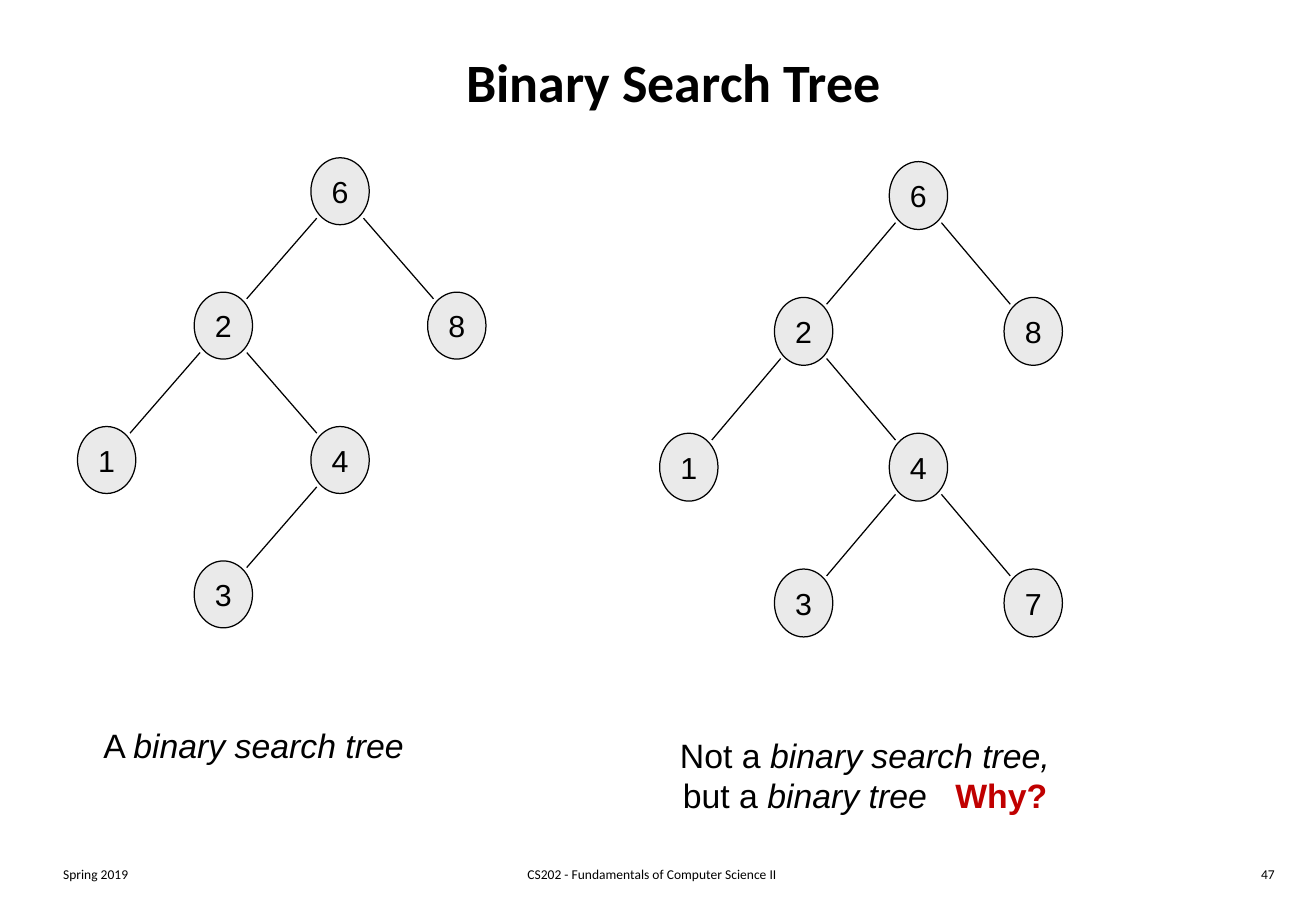
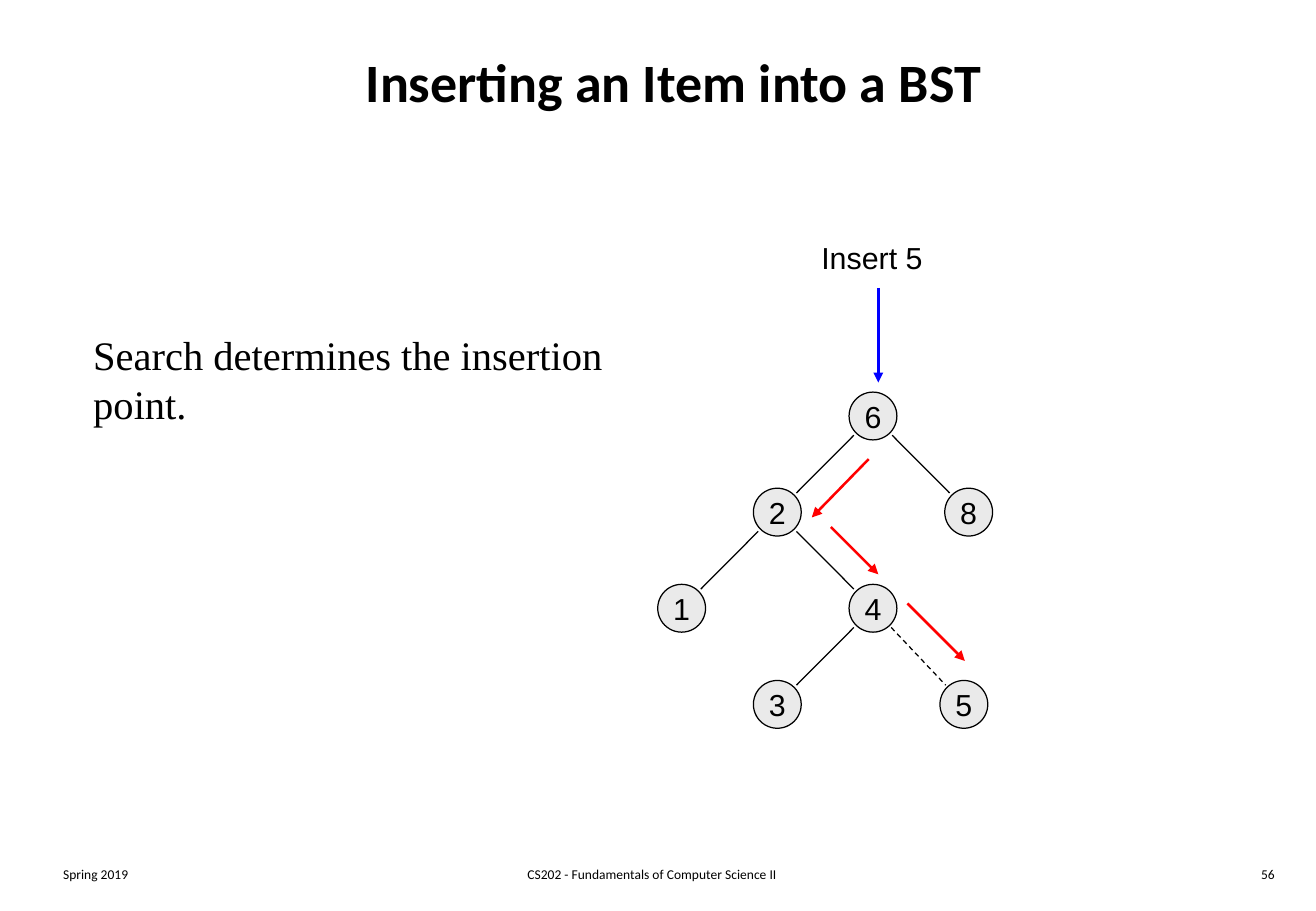
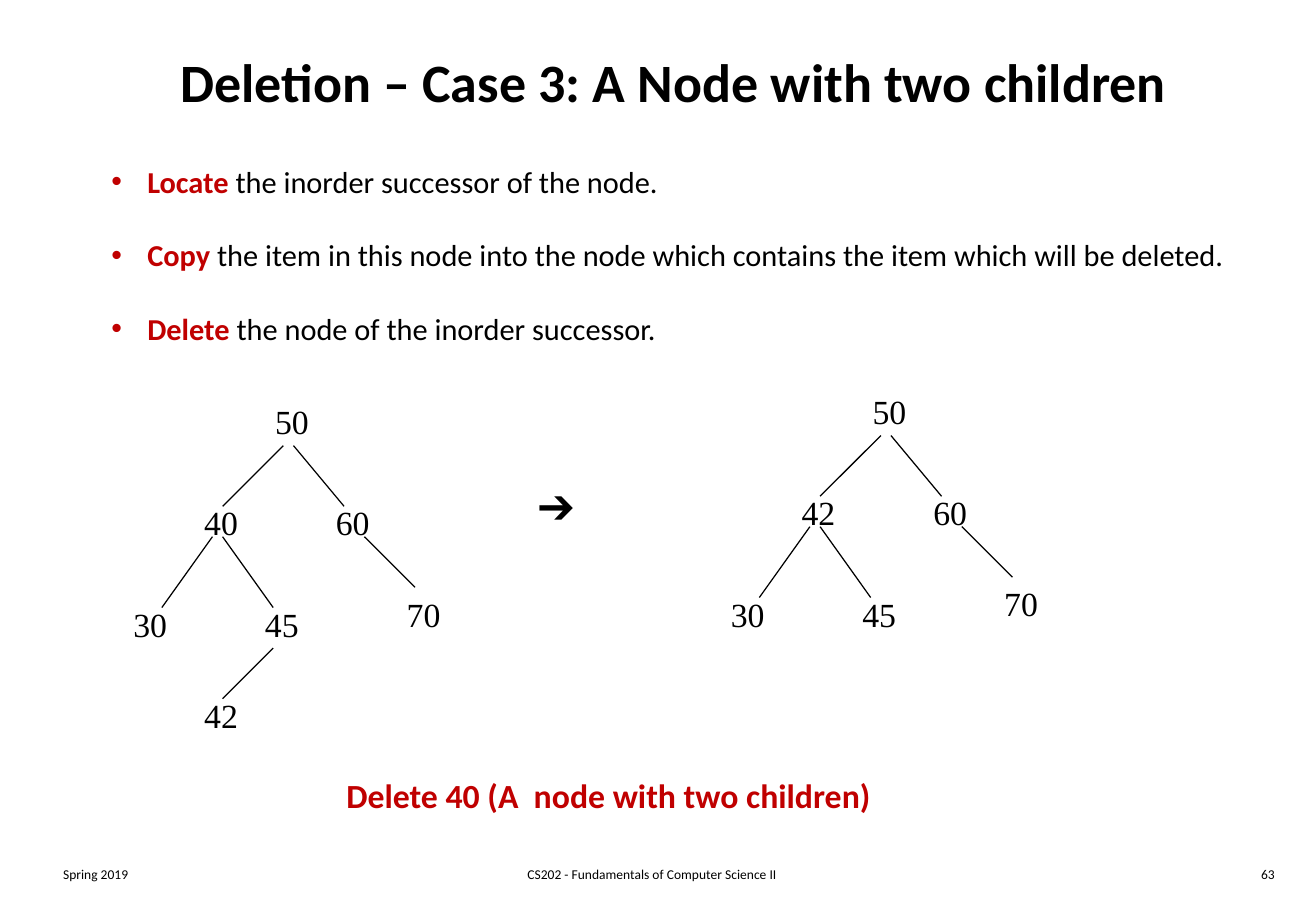
from lxml import etree
from pptx import Presentation
from pptx.dml.color import RGBColor
from pptx.enum import dml, shapes, text
from pptx.oxml import ns
from pptx.util import Cm, Pt

COLORS = {"ink": "000000", "node": "EAEAEA", "key": "C00000",
          "insert": "0000FF", "path": "FF0000"}
SANS, BODY, SERIF = "Arial", "Calibri", "Times New Roman"
LEFT, CENTER, RIGHT = text.PP_ALIGN.LEFT, text.PP_ALIGN.CENTER, text.PP_ALIGN.RIGHT

# Shared frame: all lengths are in centimetres
SLIDE_SIZE = (27.51, 19.05)
TITLE_BOX = (1.07, 0.43, 26.03, 2.54)
TERM, COURSE = "Spring 2019", "CS202 - Fundamentals of Computer Science II"
FOOTER_BOXES = [(1.07, 5.74, LEFT), (8.48, 10.31, CENTER), (21.16, 5.74, RIGHT)]
FOOTER_TOP, FOOTER_HEIGHT = 17.98, 0.64

# Circle trees: key -> (column, row) counted from the root
SEARCH_TREE = {"6": (0, 0), "2": (-1, 1), "8": (1, 1), "1": (-2, 2), "4": (0, 2), "3": (-1, 3)}
SEARCH_EDGES = ["62", "68", "21", "24", "43"]
EDGE_INSET = 0.2  # share of an edge left free at each end

# Label trees: places counted in twelfths of an inch from the root label
UNIT = 2.54 / 12
LABELS = [(0, 0), (-7, 10), (6, 10), (-14, 20), (-1, 20), (13, 19), (-7, 29)]
LABEL_EDGES = [((2, 5), (-4, 11)), ((3, 5), (8, 11)), ((-5, 14), (-10, 21)),
               ((-4, 14), (1, 21)), ((10, 14), (15, 19)), ((1, 25), (-4, 30))]
LABEL_TREES = [((5.5, 8.26), ["50", "40", "60", "30", "45", "70", "42"]),
               ((17.99, 8.05), ["50", "42", "60", "30", "45", "70"])]

INSERT_ARROWS = [((18.36, 6.02), (18.36, 8), "insert"),
                 ((18.16, 9.6), (16.97, 10.82), "path"),
                 ((17.37, 11.02), (18.36, 12.01), "path"),
                 ((18.97, 12.62), (20.17, 13.82), "path")]

IT = {"italic": True}
KEY = {"bold": True, "color": "key"}
VALID_CAPTION = [[("A ", {}), ("binary search tree", IT)]]
INVALID_CAPTION = [[("Not a ", {}), ("binary search tree,", IT)],
                   [("but a ", {}), ("binary tree   ", IT), ("Why?", KEY)]]
DELETION_STEPS = [
    [("Locate", KEY), (" the inorder successor of the node.", {})],
    [("Copy", KEY), (" the item in this node into the node which contains "
                     "the item which will be deleted.", {})],
    [("Delete", KEY), (" the node of the inorder successor.", {})],
]


def rgb(name):
    return RGBColor.from_string(COLORS[name])


def write(frame, paragraphs, size, font, align=LEFT, **style):
    """Fill a frame with paragraphs, each a string or a list of (text, style)."""
    for index, spans in enumerate(paragraphs):
        para = frame.paragraphs[0] if index == 0 else frame.add_paragraph()
        para.alignment = align
        for words, extra in [(spans, {})] if isinstance(spans, str) else spans:
            look = {**style, **extra}
            span = para.add_run()
            span.text = words
            span.font.name, span.font.size = font, Pt(size)
            span.font.bold = look.get("bold", False)
            span.font.italic = look.get("italic", False)
            span.font.color.rgb = rgb(look.get("color", "ink"))


def add_text(slide, box, paragraphs, size, font, align=LEFT, **style):
    frame = slide.shapes.add_textbox(*map(Cm, box)).text_frame
    frame.word_wrap = True
    write(frame, paragraphs, size, font, align, **style)
    return frame


def add_line(slide, start, end, color="ink", width=0.75, dashed=False, arrow=False):
    line = slide.shapes.add_connector(shapes.MSO_CONNECTOR.STRAIGHT, *map(Cm, (*start, *end)))
    line.line.color.rgb = rgb(color)
    line.line.width = Pt(width)
    if dashed:
        line.line.dash_style = dml.MSO_LINE.DASH
    if arrow:
        etree.SubElement(line.line._get_or_add_ln(), ns.qn("a:tailEnd"), type="triangle")
    etree.SubElement(line._element.spPr, ns.qn("a:effectLst"))


def add_circle_tree(slide, nodes, edges, root, step, size, dashed=()):
    centers = {key: tuple(root[axis] + place[axis] * step[axis] for axis in (0, 1))
               for key, place in nodes.items()}
    for edge in edges:
        parent, child = (centers[key] for key in edge)
        start, end = (tuple(a + share * (b - a) for a, b in zip(parent, child))
                      for share in (EDGE_INSET, 1 - EDGE_INSET))
        add_line(slide, start, end, dashed=edge in dashed)
    for key, (x, y) in centers.items():
        width, height = size
        node = slide.shapes.add_shape(
            shapes.MSO_SHAPE.OVAL, Cm(x - width / 2), Cm(y - height / 2), Cm(width), Cm(height))
        node.shadow.inherit = False
        node.fill.solid()
        node.fill.fore_color.rgb = rgb("node")
        node.line.color.rgb = rgb("ink")
        node.line.width = Pt(0.75)
        frame = node.text_frame
        frame.word_wrap = False
        frame.vertical_anchor = text.MSO_ANCHOR.MIDDLE
        frame.margin_left = frame.margin_right = frame.margin_top = frame.margin_bottom = 0
        write(frame, [key], 18, SANS, CENTER)


def add_label_tree(slide, root, keys):
    def place(point):
        return tuple(origin + UNIT * offset for origin, offset in zip(root, point))

    # Each label but the root has one edge leading to it
    for start, end in LABEL_EDGES[:len(keys) - 1]:
        add_line(slide, place(start), place(end))
    for key, point in zip(keys, LABELS):
        add_text(slide, (*place(point), 1.4, 1.09), [key], 20, SERIF)


def add_bullets(frame, indent, gap):
    for para in frame.paragraphs:
        para.space_after = Pt(gap)
        props = para._p.get_or_add_pPr()
        props.set("marL", str(Cm(indent)))
        props.set("indent", str(-Cm(indent)))
        etree.SubElement(props, ns.qn("a:buFont"), typeface=SANS)
        etree.SubElement(props, ns.qn("a:buChar"), char="•")


def new_slide(deck, title, number):
    slide = deck.slides.add_slide(deck.slide_layouts[6])
    frame = add_text(slide, TITLE_BOX, [title], 32, BODY, CENTER, bold=True)
    frame.vertical_anchor = text.MSO_ANCHOR.MIDDLE
    for words, (left, width, align) in zip((TERM, COURSE, str(number)), FOOTER_BOXES):
        add_text(slide, (left, FOOTER_TOP, width, FOOTER_HEIGHT), [words], 8, BODY, align)
    return slide


def build_definition(deck):
    slide = new_slide(deck, "Binary Search Tree", 47)
    add_circle_tree(slide, SEARCH_TREE, SEARCH_EDGES,
                    root=(7.11, 4), step=(2.44, 2.81), size=(1.22, 1.4))
    add_circle_tree(slide, {**SEARCH_TREE, "7": (1, 3)}, SEARCH_EDGES + ["47"],
                    root=(19.2, 4.09), step=(2.4, 2.84), size=(1.22, 1.42))
    add_text(slide, (1.91, 15.04, 7.5, 1.09), VALID_CAPTION, 20, SANS)
    add_text(slide, (12.27, 15.24, 11.63, 1.98), INVALID_CAPTION, 20, SANS, CENTER)


def build_insertion(deck):
    slide = new_slide(deck, "Inserting an Item into a BST", 56)
    add_circle_tree(slide, {**SEARCH_TREE, "5": (0.95, 3)}, SEARCH_EDGES + ["45"],
                    root=(18.25, 8.7), step=(2, 2.01), size=(1, 1), dashed=["45"])
    for start, end, color in INSERT_ARROWS:
        add_line(slide, start, end, color, 1.5, arrow=True)
    add_text(slide, (16.92, 4.88, 3, 1.02), ["Insert 5"], 18, SANS)
    add_text(slide, (1.7, 6.78, 13, 2.3), ["Search determines the insertion point."], 24, SERIF)


def build_deletion(deck):
    slide = new_slide(deck, "Deletion – Case 3: A Node with two children", 63)
    steps = add_text(slide, (2.08, 3.28, 24.4, 4.11), DELETION_STEPS, 18, BODY)
    add_bullets(steps, indent=0.75, gap=22)
    for root, keys in LABEL_TREES:
        add_label_tree(slide, root, keys)
    add_text(slide, (11, 9.96, 1.6, 1.27), ["➔"], 24, SERIF)
    add_text(slide, (6.99, 16.08, 12.5, 1.12), ["Delete 40 (A  node with two children)"],
             20, BODY, **KEY)


def main():
    deck = Presentation()
    deck.slide_width, deck.slide_height = map(Cm, SLIDE_SIZE)
    for build in (build_definition, build_insertion, build_deletion):
        build(deck)
    deck.save("out.pptx")


if __name__ == "__main__":
    main()
